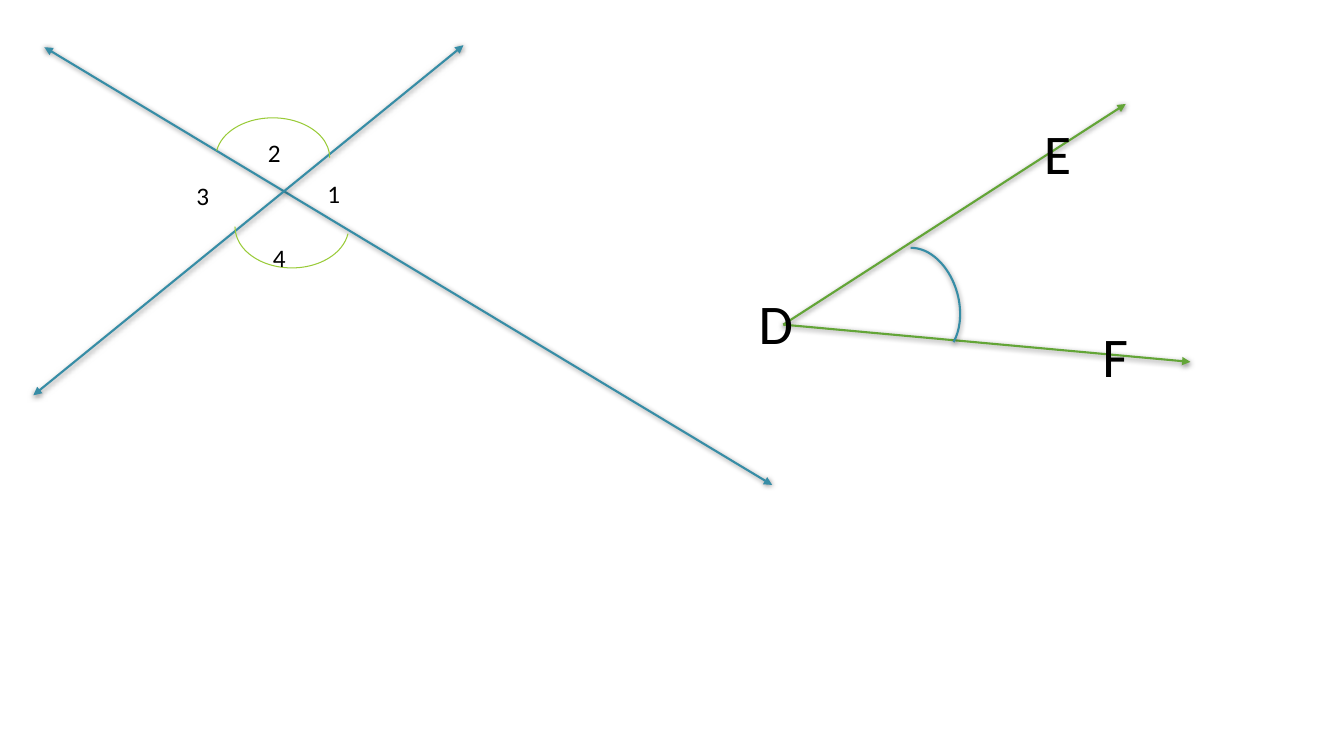
from lxml.etree import SubElement
from pptx import Presentation
from pptx.dml.color import RGBColor
from pptx.enum.shapes import MSO_CONNECTOR, MSO_SHAPE
from pptx.enum.text import MSO_AUTO_SIZE
from pptx.oxml.ns import qn
from pptx.util import Cm, Pt

BLUE = RGBColor(0x37, 0x8D, 0xA6)
GREEN = RGBColor(0x63, 0xA5, 0x37)
LIME = RGBColor(0x99, 0xCB, 0x38)
BLACK = RGBColor(0, 0, 0)


def add_soft_shadow(drawn):
    effects = SubElement(drawn._element.spPr, qn("a:effectLst"))
    shadow = SubElement(effects, qn("a:outerShdw"), blurRad=str(Pt(4)),
                        dist=str(Pt(1)), dir="5400000", rotWithShape="0")
    color = SubElement(shadow, qn("a:srgbClr"), val=str(BLACK))
    SubElement(color, qn("a:alpha"), val="50000")


prs = Presentation()
prs.slide_width, prs.slide_height = Cm(33.87), Cm(19.05)
slide = prs.slides.add_slide(prs.slide_layouts[6])

# Rays of angle EDF, then the two crossing lines
vertex_d = (19.74, 8.18)
for start, end, color, arrowheads in [
    (vertex_d, (28.37, 2.62), GREEN, ["tailEnd"]),
    (vertex_d, (30, 9.12), GREEN, ["tailEnd"]),
    ((1.12, 1.19), (19.46, 12.22), BLUE, ["headEnd", "tailEnd"]),
    ((0.84, 9.96), (11.68, 1.14), BLUE, ["headEnd", "tailEnd"]),
]:
    ray = slide.shapes.add_connector(
        MSO_CONNECTOR.STRAIGHT, *[Cm(v) for v in start + end])
    ray.line.color.rgb = color
    ray.line.width = Pt(1.5)
    for arrowhead in arrowheads:
        SubElement(ray.line._get_or_add_ln(), qn(f"a:{arrowhead}"), type="triangle")
    add_soft_shadow(ray)

# Angle marks; the adjustments set where each arc starts and ends
for left, top, height, rotation, arc_end, color, weight in [
    (5.44, 2.97, 2.01, 0, 0, LIME, 0.75),
    (5.92, 4.67, 2.08, 180, 0, LIME, 0.75),
    (21.72, 6.65, 2.01, 74.6, 199.92, BLUE, 1.5),
]:
    angle_mark = slide.shapes.add_shape(
        MSO_SHAPE.ARC, Cm(left), Cm(top), Cm(2.87), Cm(height))
    angle_mark.adjustments[0] = 112.26
    angle_mark.adjustments[1] = arc_end
    angle_mark.rotation = rotation
    angle_mark.fill.background()
    angle_mark.line.color.rgb = color
    angle_mark.line.width = Pt(weight)
    if color == BLUE:
        add_soft_shadow(angle_mark)
    else:
        angle_mark.shadow.inherit = False

# Angle numbers and point letters
for text, left, top, width, height, size in [
    ("2", 6.5, 3.33, 1.73, 1.02, 18),
    ("3", 4.7, 4.42, 0.86, 1.02, 18),
    ("1", 8, 4.37, 0.86, 1.02, 18),
    ("4", 6.63, 5.97, 0.86, 1.02, 18),
    ("D", 18.87, 7.14, 1.37, 1.96, 40),
    ("E", 26.06, 2.87, 1.14, 1.96, 40),
    ("F", 27.53, 7.98, 1.14, 1.96, 40),
]:
    label = slide.shapes.add_textbox(Cm(left), Cm(top), Cm(width), Cm(height)).text_frame
    label.text = text
    label.word_wrap = text == "2"
    label.auto_size = MSO_AUTO_SIZE.SHAPE_TO_FIT_TEXT
    font = label.paragraphs[0].font
    font.name = "Calibri"
    font.size = Pt(size)
    font.color.rgb = BLACK

prs.save("out.pptx")
